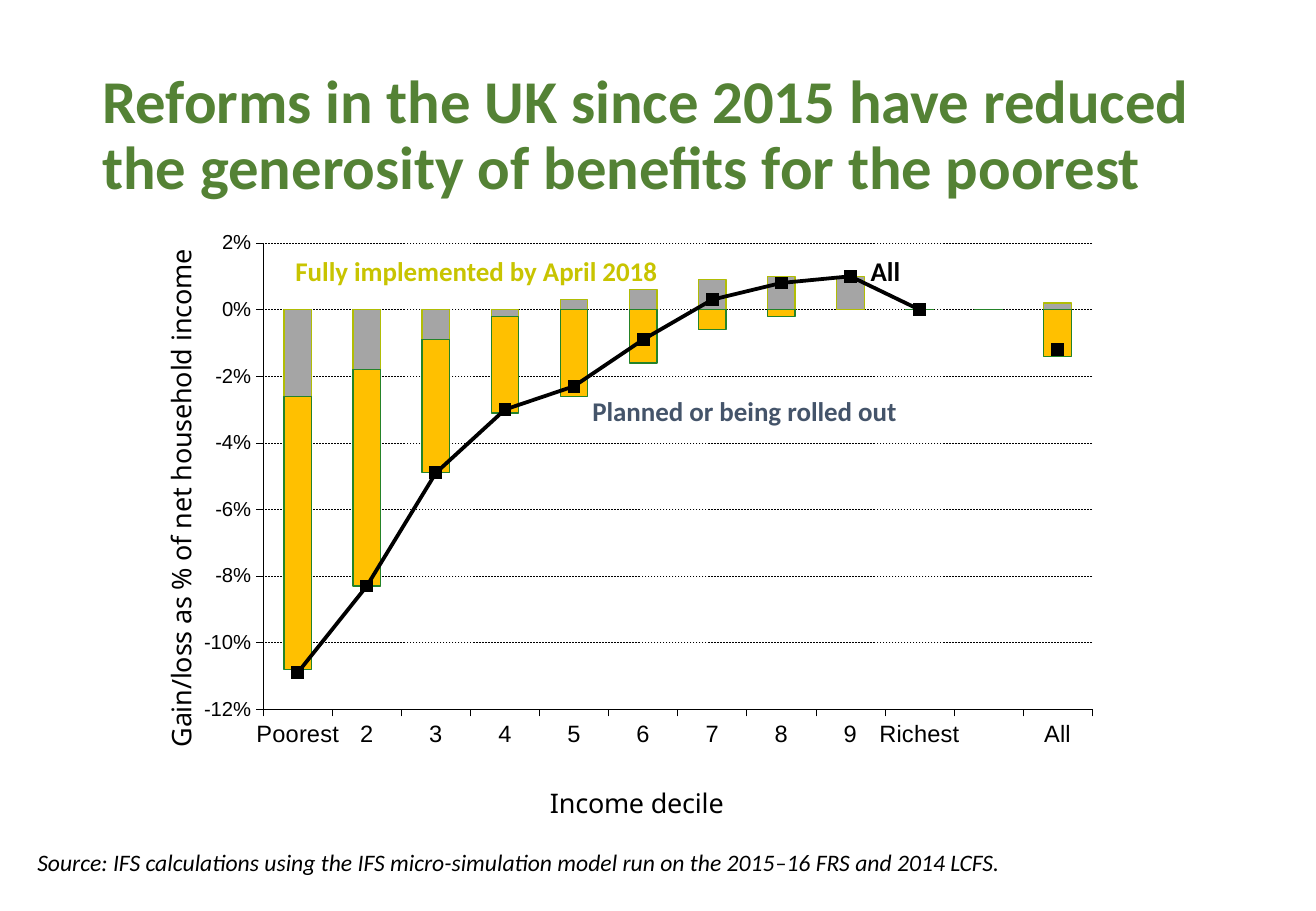
from dataclasses import dataclass

from lxml.etree import SubElement
from pptx import Presentation
from pptx.chart.data import CategoryChartData as Data
from pptx.dml.color import RGBColor as Rgb
from pptx.enum.chart import XL_AXIS_CROSSES as Cross, XL_CHART_TYPE as Kind
from pptx.enum.chart import XL_MARKER_STYLE as Mark, XL_TICK_LABEL_POSITION as Spot
from pptx.enum.chart import XL_TICK_MARK as Tick
from pptx.enum.dml import MSO_LINE as Dash
from pptx.enum.text import MSO_ANCHOR as Anchor, MSO_AUTO_SIZE as Fit, PP_ALIGN as Align
from pptx.oxml import parse_xml
from pptx.oxml.ns import nsdecls, qn
from pptx.util import Pt

HUES = {
    "title": "548235", "black": "000000", "plan": "44546A", "done": "C8C400",
    "grey": "A5A5A5", "lime": "B1BD05", "gold": "FFC000", "green": "248329",
}


@dataclass
class Label:
    text: str
    left: float
    top: float
    width: float
    height: float
    hue: str
    size: float = 16
    bold: bool = True
    slant: bool = False
    after: float = 10


@dataclass
class Bar:
    name: str
    vals: list
    fill: str
    edge: str


LABELS = [
    Label("Planned or being rolled out", 344, 230.5, 232, 26.5, "plan"),
    Label("Fully implemented by April 2018", 168, 147.5, 259, 26.5, "done"),
    Label("All", 509, 147.5, 153, 26.5, "black"),
    Label("Source: IFS calculations using the IFS micro-simulation model run on "
          "the 2015‒16 FRS and 2014 LCFS.", 15, 499, 711, 24.5, "black",
          size=14, bold=False, slant=True, after=0),
]
DECILES = ["Poorest", *map(str, range(2, 10)), "Richest", "", "All"]
BARS = [
    Bar("Fully implemented", [-.026, -.018, -.009, -.002, .003, .006, .009, .01,
                              .01, 0, None, .002], "grey", "lime"),
    Bar("Planned", [-.082, -.065, -.04, -.029, -.026, -.016, -.006, -.002,
                    0, 0, 0, -.014], "gold", "green"),
]
TOTAL = [-.109, -.083, -.049, -.03, -.023, -.009, .003, .008, .01, 0, None, -.012]


def tint(key: str) -> Rgb:
    return Rgb.from_string(HUES[key])


def style(font, face: str, size: float, hue: str = "black",
          bold: bool = False, slant: bool = False) -> None:
    font.name, font.size, font.bold, font.italic = face, Pt(size), bold, slant
    font.color.rgb = tint(hue)


def stroke(line, hue: str, width: float) -> None:
    line.color.rgb, line.width = tint(hue), Pt(width)


def draw_label(slide, item: Label) -> None:
    box = slide.shapes.add_textbox(*map(Pt, (item.left, item.top, item.width, item.height)))
    frame = box.text_frame
    frame.text, frame.word_wrap = item.text, True
    frame.auto_size = Fit.SHAPE_TO_FIT_TEXT
    para = frame.paragraphs[0]
    para.space_after = Pt(item.after)
    style(para.runs[0].font, "Calibri", item.size, item.hue, item.bold, item.slant)


def strip(node, tag: str) -> None:
    for old in node.findall(qn(tag)):
        node.remove(old)


def place(node, index: int, **parts) -> None:
    """Give a chart part a fixed layout, as shares of the chart."""
    strip(node, "c:layout")
    tags = "".join(f'<c:{tag} val="{val}"/>' for tag, val in parts.items())
    node.insert(index, parse_xml(
        f'<c:layout {nsdecls("c")}><c:manualLayout>{tags}</c:manualLayout></c:layout>'))


def set_axis(axis, text: str, size: float, x: float, y: float) -> None:
    axis.major_tick_mark, axis.minor_tick_mark = Tick.OUTSIDE, Tick.NONE
    axis.tick_label_position = Spot.LOW
    style(axis.tick_labels.font, "Arial", size)
    stroke(axis.format.line, "black", .25)
    title = axis.axis_title
    title.text_frame.text = text
    style(title.text_frame.paragraphs[0].runs[0].font, "Noto Sans", 16)
    place(title._element, 1, xMode="edge", yMode="edge", x=x, y=y)


def split_line(chart) -> None:
    """Move the last series from the columns to a line plot on the same axes."""
    bars = chart.plots[0]._element
    row = bars.findall(qn("c:ser"))[-1]
    strip(row, "c:invertIfNegative")
    line = parse_xml(f'<c:lineChart {nsdecls("c")}><c:grouping val="standard"/>'
                     '<c:varyColors val="0"/></c:lineChart>')
    line.append(row)
    SubElement(line, qn("c:marker")).set("val", "1")
    for axis in bars.findall(qn("c:axId")):
        SubElement(line, qn("c:axId")).set("val", axis.get("val"))
    bars.addnext(line)


def draw_chart(slide) -> None:
    data = Data(number_format="0%")
    data.categories = DECILES
    for bar in BARS:
        data.add_series(bar.name, bar.vals)
    data.add_series("All", TOTAL)
    chart = slide.shapes.add_chart(
        Kind.COLUMN_STACKED, *map(Pt, (64, 112.5, 652.5, 385)), data).chart
    chart.has_legend = chart.has_title = False
    style(chart.font, "Noto Sans", 9.5)

    # Columns
    plot = chart.plots[0]
    plot.gap_width, plot.overlap, plot.vary_by_categories = 150, 100, False
    split_line(chart)
    for row, bar in zip(plot.series, BARS):
        row.invert_if_negative = False
        row.format.fill.solid()
        row.format.fill.fore_color.rgb = tint(bar.fill)
        stroke(row.format.line, bar.edge, .75)

    # Line of totals
    total = chart.plots[1].series[0]
    total.smooth = False
    stroke(total.format.line, "black", 2.25)
    total.marker.style, total.marker.size = Mark.SQUARE, 7
    total.marker.format.fill.solid()
    total.marker.format.fill.fore_color.rgb = tint("black")
    stroke(total.marker.format.line, "black", .75)

    # Axes
    set_axis(chart.category_axis, "Income decile", 14, .397, .905)
    side = chart.value_axis
    set_axis(side, "Gain/loss as % of net household income", 12, .043, .085)
    turn = side.axis_title.text_frame._txBody.find(qn("a:bodyPr"))
    turn.set("rot", "-5400000")
    turn.set("vert", "horz")
    side.minimum_scale, side.maximum_scale, side.major_unit = -.12, .02, .02
    side.crosses = Cross.MINIMUM
    side.tick_labels.number_format = "0%"
    side.tick_labels.number_format_is_linked = False
    grid = side.major_gridlines.format.line
    stroke(grid, "black", .25)
    grid.dash_style = Dash.DASH
    area = chart._chartSpace.find(".//" + qn("c:plotArea"))
    place(area, 0, layoutTarget="inner", xMode="edge", yMode="edge",
          x=.141, y=.082, w=.753, h=.718)


def draw_title(slide) -> None:
    title = slide.shapes.title
    title.left, title.top, title.width, title.height = map(Pt, (53.5, 29, 672.5, 104.5))
    frame = title.text_frame
    frame.text = ("Reforms in the UK since 2015 have reduced the generosity "
                  "of benefits for the poorest")
    frame.word_wrap, frame.vertical_anchor = True, Anchor.MIDDLE
    frame.auto_size = Fit.NONE
    para = frame.paragraphs[0]
    para.alignment, para.line_spacing = Align.LEFT, .9
    style(para.runs[0].font, "Calibri", 36, "title", bold=True)


def main() -> None:
    deck = Presentation()
    deck.slide_width, deck.slide_height = Pt(780), Pt(540)
    slide = deck.slides.add_slide(deck.slide_layouts[5])
    draw_title(slide)
    draw_chart(slide)
    for item in LABELS:
        draw_label(slide, item)
    deck.save("out.pptx")


if __name__ == "__main__":
    main()
